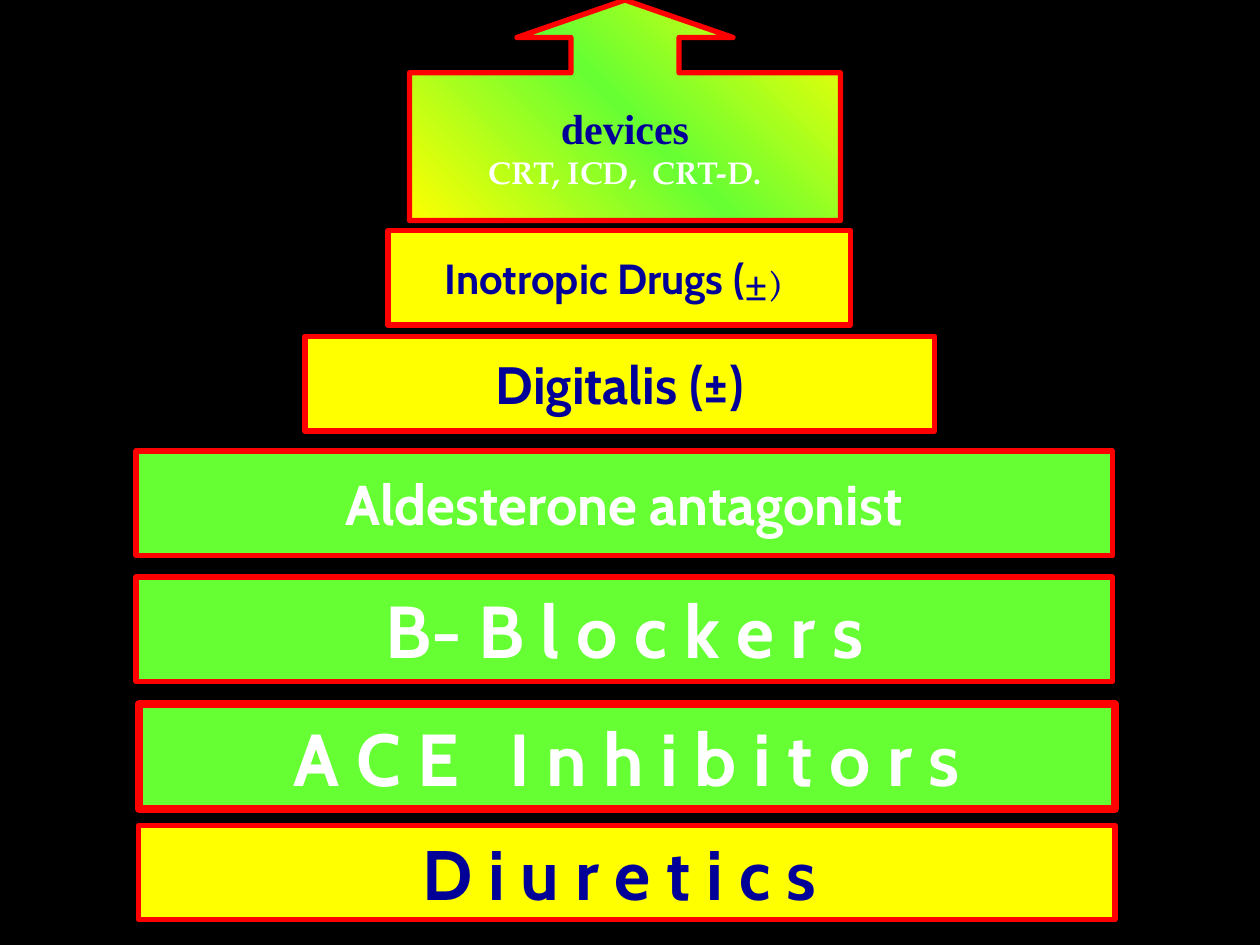
from dataclasses import dataclass
from copy import deepcopy

from pptx import Presentation
from pptx.dml.color import RGBColor
from pptx.enum.shapes import MSO_SHAPE as Shape
from pptx.enum.text import MSO_ANCHOR as Anchor, PP_ALIGN as Align
from pptx.oxml.ns import qn
from pptx.slide import Slide
from pptx.util import Inches, Pt

BLACK = RGBColor(0x00, 0x00, 0x00)
WHITE = RGBColor(0xFF, 0xFF, 0xFF)
NAVY = RGBColor(0x00, 0x00, 0x99)
RED = RGBColor(0xFF, 0x00, 0x00)
GREEN = RGBColor(0x66, 0xFF, 0x33)
YELLOW = RGBColor(0xFF, 0xFF, 0x00)

SANS = "Cabin"
SERIF = "TeX Gyre Pagella"
ROMAN = "Times New Roman"


@dataclass
class Pyramid:
    slide: Slide
    border: RGBColor = RED
    border_width: float = 3

    def background(self, color):
        fill = self.slide.background.fill
        fill.solid()
        fill.fore_color.rgb = color

    def block(self, preset, box, paragraphs, border_width=None):
        shape = self.slide.shapes.add_shape(preset, *map(Inches, box))
        shape.shadow.inherit = False
        shape.line.color.rgb = self.border
        shape.line.width = Pt(border_width or self.border_width)
        self.label(shape.text_frame, paragraphs)
        return shape

    def label(self, frame, paragraphs):
        frame.word_wrap = False
        frame.vertical_anchor = Anchor.MIDDLE
        for index, runs in enumerate(paragraphs):
            paragraph = frame.add_paragraph() if index else frame.paragraphs[0]
            paragraph.alignment = Align.CENTER
            for text, size, face, color in runs:
                run = paragraph.add_run()
                run.text = text
                style = {"size": Pt(size), "name": face, "bold": True}
                for key, value in style.items():
                    setattr(run.font, key, value)
                run.font.color.rgb = color

    def step(self, box, runs, color, border_width=None):
        bar = self.block(Shape.RECTANGLE, box, [runs], border_width)
        bar.fill.solid()
        bar.fill.fore_color.rgb = color

    def summit(self, box, paragraphs, adjustments, colors, angle):
        callout = self.block(Shape.UP_ARROW_CALLOUT, box, paragraphs)
        for index, value in enumerate(adjustments):
            callout.adjustments[index] = value
        fill = callout.fill
        fill.gradient()
        fill.gradient_angle = angle
        stop_list = next(callout.element.iter(qn("a:gsLst")))
        while len(stop_list) < len(colors):
            stop_list.append(deepcopy(stop_list[-1]))
        for index, (stop, color) in enumerate(zip(fill.gradient_stops, colors)):
            stop.position = index / (len(colors) - 1)
            stop.color.rgb = color


def main():
    deck = Presentation()
    deck.slide_width, deck.slide_height = Inches(10), Inches(7.5)
    pyramid = Pyramid(deck.slides.add_slide(deck.slide_layouts[6]))
    pyramid.background(BLACK)

    inotropic = [
        ("Inotropic Drugs (", 24, SANS, NAVY),
        ("±)", 18, SERIF, NAVY),
        (" ", 24, SANS, NAVY),
    ]
    steps = [
        ((1.1, 5.59, 7.75, 0.83), [("A C E   I n h i b i t o r s", 42, SANS, WHITE)], GREEN, 4.5),
        ((1.1, 6.55, 7.75, 0.75), [("D i u r e t i c s ", 40, SANS, NAVY)], YELLOW),
        ((1.08, 4.58, 7.75, 0.83), [("B- B l o c k e r s", 42, SANS, WHITE)], GREEN),
        ((1.08, 3.58, 7.75, 0.83), [("Aldesterone antagonist", 32, SANS, WHITE)], GREEN),
        ((2.42, 2.67, 5, 0.75), [("Digitalis (±)", 30, SANS, NAVY)], YELLOW),
        ((3.08, 1.83, 3.67, 0.75), inotropic, YELLOW),
    ]
    for step in steps:
        pyramid.step(*step)

    devices = [
        [("devices", 24, ROMAN, NAVY)],
        [("CRT, ICD,  CRT-D.", 18, SERIF, WHITE)],
    ]
    pyramid.summit(
        (3.25, 0, 3.42, 1.75),
        devices,
        adjustments=(0.49, 0.49, 0.17, 0.67),
        colors=(YELLOW, GREEN, YELLOW),
        angle=45,
    )
    deck.save("out.pptx")


if __name__ == "__main__":
    main()
